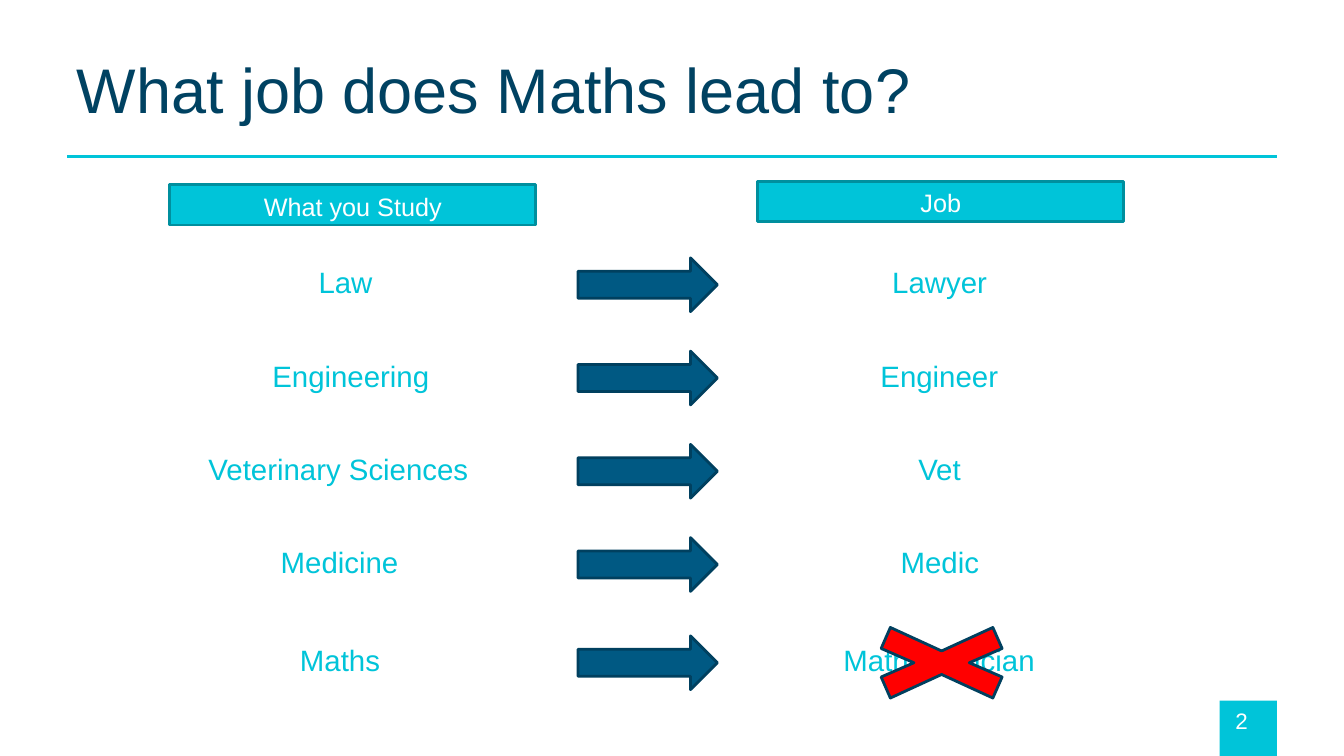
import pptx
import pptx.util
import pptx.dml.color
import pptx.enum.shapes
import pptx.enum.text
import pptx.oxml
import pptx.oxml.ns
from dataclasses import dataclass


@dataclass(frozen=True)
class Theme:
    font: str = "Arial"
    cyan: str = "00C4D9"
    teal: str = "008F9E"
    blue: str = "005983"
    navy: str = "00405F"
    ink: str = "004262"
    red: str = "FF0000"
    white: str = "FFFFFF"
    title: int = 45
    item: int = 21
    head: int = 18
    page: int = 16
    stroke: int = 2


THEME = Theme()
ALIGN = pptx.enum.text.PP_ALIGN
SHAPE = pptx.enum.shapes.MSO_SHAPE
WIDE, HIGH = pptx.util.Inches(13.33), pptx.util.Inches(7.5)
COLS, ROWS = 160, 90
FIRST, PITCH = 30.7, 11.1
JOB_MID = 112

PAIRS = [
    ("Law", 41.2, 6.8, "Lawyer", 11.8),
    ("Engineering", 42, 19.4, "Engineer", 14.6),
    ("Veterinary Sciences", 40.6, 31.8, "Vet", 5.6),
    ("Medicine", 40.6, 14.6, "Medic", 9.8),
    ("Maths", 40.6, 10, "Mathematician", 23.4),
]
HEADS = [("What you Study", 20.2, 22), ("Job", 90.2, 21.6)]
CROSS = [(-3.3, 0), (-7.2, -1.7), (-6.1, -4.2), (0, -1.4), (6.1, -4.2), (7.2, -1.7)]


def across(cols):
    return round(WIDE * cols / COLS)


def down(rows):
    return round(HIGH * rows / ROWS)


def area(x, y, w, h):
    return across(x), down(y), across(w), down(h)


def color(code):
    return pptx.dml.color.RGBColor.from_string(code)


def write(shape, text, size, ink, align=ALIGN.LEFT, left=0.01, top=0.04):
    frame = shape.text_frame
    frame.word_wrap = True
    frame.vertical_anchor = pptx.enum.text.MSO_ANCHOR.TOP
    frame.margin_left = pptx.util.Inches(left)
    frame.margin_top = pptx.util.Inches(top)
    frame.margin_right = frame.margin_bottom = 0
    frame.text = text
    line = frame.paragraphs[0]
    line.alignment = align
    font = line.runs[0].font
    font.name, font.size = THEME.font, pptx.util.Pt(size)
    font.color.rgb = color(ink)


def label(slide, text, box, size, ink, **style):
    write(slide.shapes.add_textbox(*area(*box)), text, size, ink, **style)


def paint(shape, fill, edge=None):
    shape.shadow.inherit = False
    shape.fill.solid()
    shape.fill.fore_color.rgb = color(fill)
    if edge:
        shape.line.color.rgb = color(edge)
        shape.line.width = pptx.util.Pt(THEME.stroke)
    else:
        shape.line.fill.background()


def block(slide, kind, box, fill, edge=None):
    shape = slide.shapes.add_shape(kind, *area(*box))
    paint(shape, fill, edge)
    return shape


def rule(slide, x, end, y):
    line = slide.shapes.add_connector(
        pptx.enum.shapes.MSO_CONNECTOR.STRAIGHT, across(x), down(y), across(end), down(y)
    )
    line.line.color.rgb = color(THEME.cyan)
    line.line.width = pptx.util.Pt(THEME.stroke)
    props = line.element.find(pptx.oxml.ns.qn("p:spPr"))
    props.append(pptx.oxml.parse_xml(f"<a:effectLst {pptx.oxml.ns.nsdecls('a')}/>"))


def cross(slide, x, y):
    half = CROSS + [(-dx, -dy) for dx, dy in CROSS]
    dots = [(across(x + dx), down(y + dy)) for dx, dy in half]
    pen = slide.shapes.build_freeform(*dots[0])
    pen.add_line_segments(dots[1:], close=True)
    paint(pen.convert_to_shape(), THEME.red, THEME.navy)


def match(slide, row, study, mid, wide, job, span):
    last = row == len(PAIRS) - 1
    top = FIRST + row * PITCH + (0.6 if last else 0)
    for text, x, w in ((study, mid, wide), (job, JOB_MID, span)):
        label(slide, text, (x - w / 2, top + 0.3, w, 4.6), THEME.item, THEME.cyan)
    block(slide, SHAPE.RIGHT_ARROW, (68.8, top, 16.6, 6.4), THEME.blue, THEME.navy)


def main():
    deck = pptx.Presentation()
    deck.slide_width, deck.slide_height = WIDE, HIGH
    slide = deck.slides.add_slide(deck.slide_layouts[6])
    block(slide, SHAPE.RECTANGLE, (145.2, 83.4, 6.8, 6.6), THEME.cyan)
    rule(slide, 8, 152, 18.6)
    label(slide, "What job does Maths lead to?", (7.7, 5.5, 123, 10.8),
          THEME.title, THEME.ink, left=0.12)
    for text, x, y in HEADS:
        head = block(slide, SHAPE.RECTANGLE, (x, y, 43.6, 4.8), THEME.cyan, THEME.teal)
        write(head, text, THEME.head, THEME.white, align=ALIGN.CENTER, left=0, top=0.06)
    for row, pair in enumerate(PAIRS):
        match(slide, row, *pair)
    cross(slide, 112.1, 78.9)
    label(slide, "2", (146.6, 84.2, 4.1, 3.4), THEME.page, THEME.white, left=0.04, top=0)
    deck.save("out.pptx")


if __name__ == "__main__":
    main()
